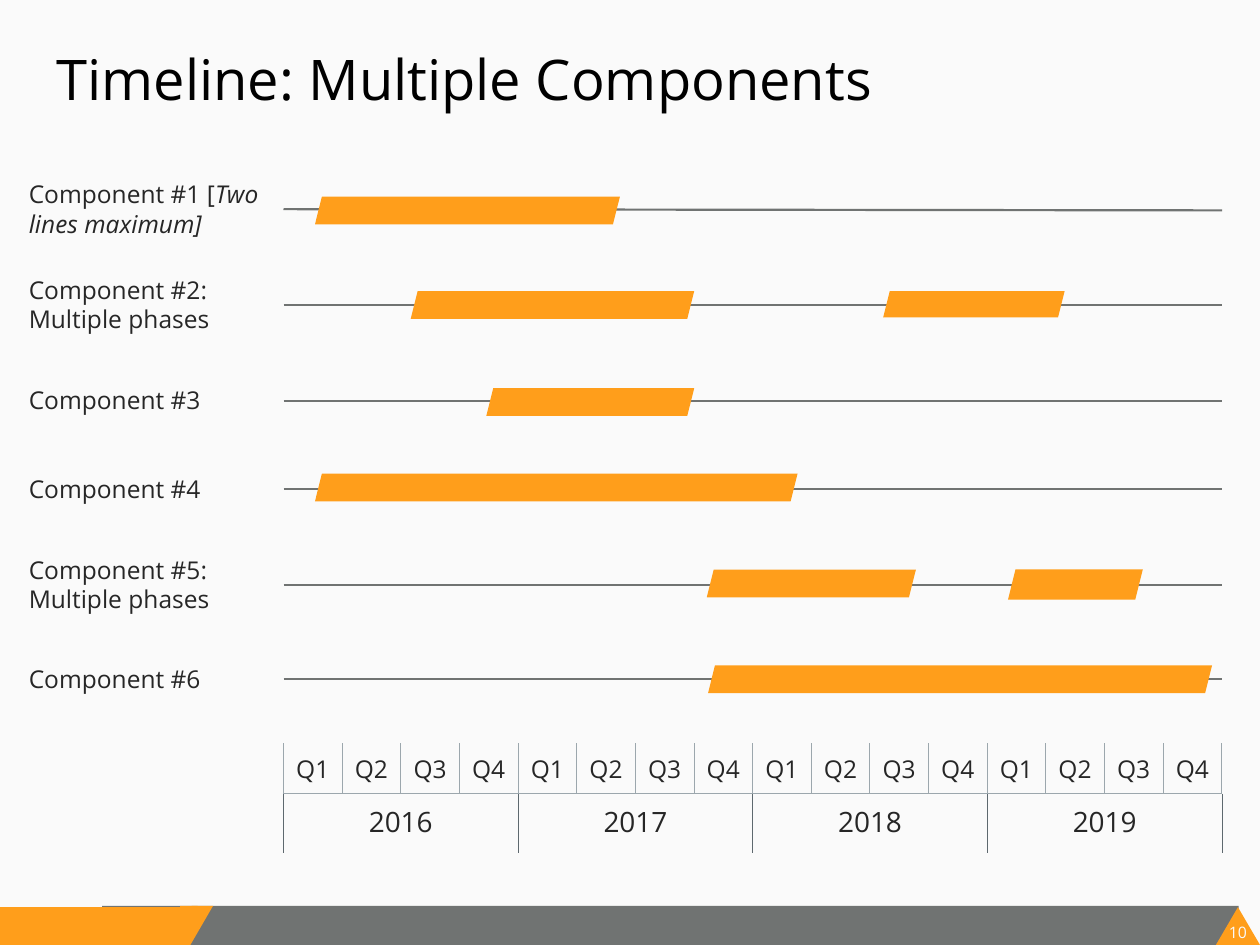
from lxml import etree
from pptx import Presentation
from pptx import util as u
from pptx.dml.color import RGBColor
from pptx.enum import shapes, text
from pptx.oxml.ns import qn

ORANGE = RGBColor(0xFF, 0x9E, 0x1B)
GRAY = RGBColor(0x70, 0x73, 0x72)
PALE = RGBColor(0xFA, 0xFA, 0xFA)
BLACK = RGBColor(0, 0, 0)
INK = RGBColor(0x26, 0x26, 0x26)
MIST = RGBColor(0x9C, 0xA7, 0xAD)
SLATE = RGBColor(0x5D, 0x68, 0x6E)

FONT = "Open Sans"
PLAIN = "{2D5ABB26-0587-4C30-8999-92F81FD0307C}"
KIND = shapes.MSO_SHAPE
ALIGN = text.PP_ALIGN
ANCHOR = text.MSO_ANCHOR
LEFT, WIDE = 2.25, 7.45

TITLE = "Timeline: Multiple Components"
PAGE = "10"
YEARS = ["2016", "2017", "2018", "2019"]
TERMS = ["Q1", "Q2", "Q3", "Q4"] * len(YEARS)

ROWS = [
    (1.66, [("Component #1 [", False), ("Two lines maximum]", True)],
     [(2.5, 1.56, 2.42, 0.22)]),
    (2.42, [("Component #2: Multiple phases", False)],
     [(3.26, 2.31, 2.25, 0.22), (7.01, 2.31, 1.44, 0.21)]),
    (3.18, [("Component #3", False)], [(3.86, 3.08, 1.65, 0.22)]),
    (3.88, [("Component #4", False)], [(2.5, 3.76, 3.83, 0.22)]),
    (4.64, [("Component #5: Multiple phases", False)],
     [(5.61, 4.52, 1.66, 0.22), (8, 4.52, 1.07, 0.24)]),
    (5.39, [("Component #6", False)], [(5.62, 5.28, 4, 0.22)]),
]

FOOTER = [
    (KIND.RECTANGLE, (0.81, 7.19, 9.02, 0.31), GRAY),
    (KIND.RECTANGLE, (0, 7.2, 1.5, 0.3), ORANGE),
    (KIND.ISOSCELES_TRIANGLE, (9.65, 7.2, 0.35, 0.3), ORANGE),
    (KIND.PARALLELOGRAM, (1.34, 7.19, 0.35, 0.31), ORANGE),
    (KIND.RECTANGLE, (1.43, 7.19, 0.14, 0.13), ORANGE),
]


def place(box):
    return [u.Inches(v) for v in box]


def style(obj, **vals):
    for key, val in vals.items():
        setattr(obj, key, val)


def write(para, runs, size, color):
    for words, slant in runs:
        run = para.add_run()
        run.text = words
        style(run.font, name=FONT, size=u.Pt(size), italic=slant)
        run.font.color.rgb = color


def label(slide, box, runs, size, color, pads, anchor, align=ALIGN.LEFT, wrap=True):
    frame = slide.shapes.add_textbox(*place(box)).text_frame
    left, top, right, low = place(pads)
    style(frame, word_wrap=wrap, vertical_anchor=anchor, margin_left=left,
          margin_top=top, margin_right=right, margin_bottom=low)
    para = frame.paragraphs[0]
    para.alignment = align
    write(para, runs, size, color)


def block(slide, kind, box, color):
    shape = slide.shapes.add_shape(kind, *place(box))
    shape.shadow.inherit = False
    shape.fill.solid()
    shape.fill.fore_color.rgb = color
    shape.line.fill.background()
    return shape


def rule(slide, top, end):
    line = slide.shapes.add_connector(
        shapes.MSO_CONNECTOR.STRAIGHT, *place((LEFT, top, LEFT + WIDE, end)))
    line.line.color.rgb = GRAY
    line.line.width = u.Pt(1.25)
    etree.SubElement(line._element.spPr, qn("a:effectLst"))


def border(cell, sides, color):
    props = cell._tc.get_or_add_tcPr()
    for side in sides:
        edge = etree.SubElement(props, qn("a:ln" + side), w=str(u.Pt(0.5)))
        fill = etree.SubElement(edge, qn("a:solidFill"))
        etree.SubElement(fill, qn("a:srgbClr"), val=str(color))


def band(slide, names, top, high, size, sides, color, anchor, pads):
    box = place((LEFT, top, WIDE, high))
    table = slide.shapes.add_table(1, len(names), *box).table
    style(table, first_row=False, horz_banding=False)
    table._tbl.tblPr.find(qn("a:tableStyleId")).text = PLAIN
    left, over, right, low = place(pads)
    for col, name in enumerate(names):
        table.columns[col].width = u.Inches(WIDE / len(names))
        cell = table.cell(0, col)
        border(cell, sides, color)
        cell.fill.background()
        style(cell, vertical_anchor=anchor, margin_left=left, margin_top=over,
              margin_right=right, margin_bottom=low)
        para = cell.text_frame.paragraphs[0]
        para.alignment = ALIGN.CENTER
        write(para, [(name, False)], size, INK)


def main():
    deck = Presentation()
    style(deck, slide_width=u.Inches(10), slide_height=u.Inches(7.5))
    slide = deck.slides.add_slide(deck.slide_layouts[6])
    slide.background.fill.solid()
    slide.background.fill.fore_color.rgb = PALE

    for kind, box, color in FOOTER:
        shape = block(slide, kind, box, color)
        if kind == KIND.PARALLELOGRAM:
            shape.rotation = 180
            shape.adjustments[0] = 0.58
    label(slide, (9.74, 7.32, 0.17, 0.15), [(PAGE, False)], 9, PALE,
          (0, 0, 0, 0), ANCHOR.TOP, ALIGN.CENTER, False)
    label(slide, (0.35, 0.3, 9.24, 1.25), [(TITLE, False)], 32, BLACK,
          (0.1, 0.05, 0.1, 0.05), ANCHOR.TOP)

    for num, (top, runs, bars) in enumerate(ROWS):
        rule(slide, top, top if num else top + 0.01)
        label(slide, (0.13, top - 0.24, 2.09, 0.47), runs, 14, INK,
              (0.1, 0, 0.1, 0), ANCHOR.MIDDLE)
        for bar in bars:
            block(slide, KIND.PARALLELOGRAM, bar, ORANGE)

    band(slide, TERMS, 5.9, 0.4, 14, "LRB", MIST, ANCHOR.BOTTOM,
         (0.08, 0.07, 0.08, 0.07))
    band(slide, YEARS, 6.3, 0.47, 16, "LR", SLATE, ANCHOR.MIDDLE,
         (0.1, 0.07, 0.1, 0.13))
    deck.save("out.pptx")


if __name__ == "__main__":
    main()
